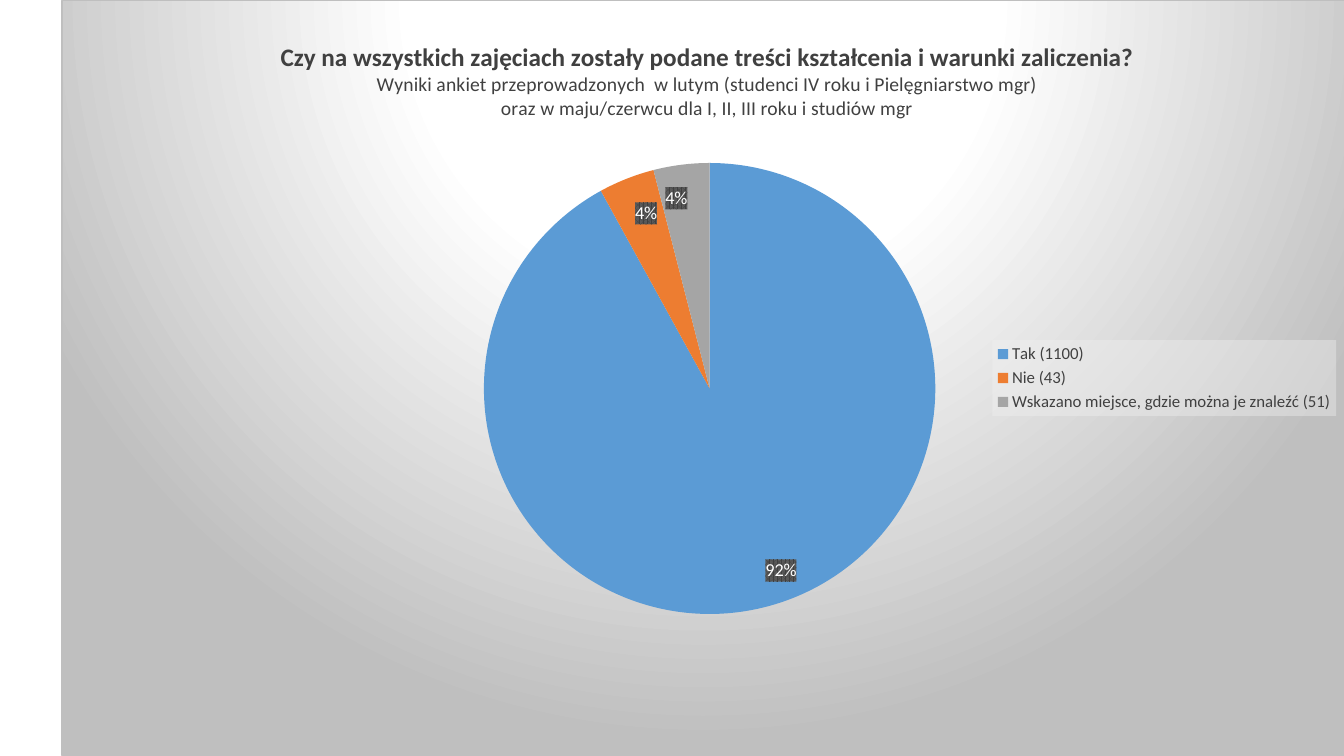
import copy

import pptx
import pptx.chart.data
import pptx.dml.color
import pptx.enum.chart
import pptx.oxml
import pptx.oxml.ns
import pptx.util

Inches = pptx.util.Inches
Pt = pptx.util.Pt
RGBColor = pptx.dml.color.RGBColor
qn = pptx.oxml.ns.qn

WHITE = RGBColor(0xFF, 0xFF, 0xFF)
SILVER = RGBColor(0xBF, 0xBF, 0xBF)
PALE = RGBColor(0xF2, 0xF2, 0xF2)
DARK = RGBColor(0x40, 0x40, 0x40)
CHARCOAL = RGBColor(0x59, 0x59, 0x59)
BLUE = RGBColor(0x5B, 0x9B, 0xD5)
ORANGE = RGBColor(0xED, 0x7D, 0x31)
GRAY = RGBColor(0xA5, 0xA5, 0xA5)
FONT = "Calibri"

ANSWERS = [
    ("Tak (1100)", 92, BLUE, (0.025, -0.026)),
    ("Nie (43)", 4, ORANGE, (0.005, 0.024)),
    ("Wskazano miejsce, gdzie można je znaleźć (51)", 4, GRAY, (-0.013, 0.022)),
]
QUESTION = "Czy na wszystkich zajęciach zostały podane treści kształcenia i warunki zaliczenia?"
SURVEY = [
    "Wyniki ankiet przeprowadzonych  w lutym (studenci IV roku i Pielęgniarstwo mgr)",
    "oraz w maju/czerwcu dla I, II, III roku i studiów mgr",
]


def set_font(font, size, color, bold=False):
    """Apply the slide's typeface with a size, colour and weight."""
    font.name = FONT
    font.size = Pt(size)
    font.bold = bold
    font.color.rgb = color


def add_text(p, text, size=14, color=DARK, bold=False):
    """Add a formatted run to a paragraph."""
    r = p.add_run()
    r.text = text
    set_font(r.font, size, color, bold)


def chart_xml(tag, content):
    """Return a chart element holding the given XML."""
    return pptx.oxml.parse_xml(
        f'<c:{tag} {pptx.oxml.ns.nsdecls("c", "a")}>{content}</c:{tag}>')


def manual_layout(modes="", **fractions):
    """Return a layout element placed by fractions of the chart."""
    sizes = "".join(f'<c:{tag} val="{val}"/>' for tag, val in fractions.items())
    return chart_xml("layout", f"<c:manualLayout>{modes}{sizes}</c:manualLayout>")


EDGES = '<c:xMode val="edge"/><c:yMode val="edge"/>'


def set_background(chart):
    """Give the chart area its radial gradient and thin border."""
    stops = "".join(
        f'<a:gs pos="{pos * 1000}"><a:srgbClr val="{color}"/></a:gs>'
        for pos, color in [(0, WHITE), (39, WHITE), (100, SILVER)])
    chart.element.find(qn("c:chart")).addnext(chart_xml(
        "spPr",
        f'<a:gradFill><a:gsLst>{stops}</a:gsLst><a:path path="circle">'
        '<a:fillToRect l="50000" t="-80000" r="50000" b="180000"/></a:path></a:gradFill>'
        f'<a:ln w="{Pt(0.75)}"><a:solidFill><a:srgbClr val="{SILVER}"/></a:solidFill></a:ln>'))


def set_title(chart, x, y):
    """Write the question and the survey dates above the pie."""
    title = chart.chart_title
    tf = title.text_frame
    add_text(tf.paragraphs[0], QUESTION, size=18, bold=True)
    for line in SURVEY:
        add_text(tf.add_paragraph(), line)
    title.include_in_layout = False
    for old in title._element.findall(qn("c:layout")):
        title._element.remove(old)
    title._element.find(qn("c:tx")).addnext(manual_layout(EDGES, x=x, y=y))


def set_legend(chart):
    """Place the legend at the right on a translucent panel."""
    chart.has_legend = True
    legend = chart.legend
    legend.position = pptx.enum.chart.XL_LEGEND_POSITION.RIGHT
    legend.include_in_layout = False
    set_font(legend.font, 12, DARK)
    legend._element.find(qn("c:txPr")).addprevious(chart_xml(
        "spPr",
        f'<a:solidFill><a:srgbClr val="{PALE}"><a:alpha val="39000"/></a:srgbClr></a:solidFill>'))


def set_labels(series):
    """Show percentages on dark patterned tags, each shifted inside its slice."""
    labels = series.data_labels
    labels.show_percentage = True
    labels.show_value = False
    labels.number_format = "0%"
    labels.number_format_is_linked = False
    labels.position = pptx.enum.chart.XL_LABEL_POSITION.INSIDE_END
    set_font(labels.font, 13, WHITE)
    group = labels._element
    group.find(qn("c:txPr")).addprevious(chart_xml(
        "spPr",
        f'<a:pattFill prst="pct75"><a:fgClr><a:srgbClr val="{DARK}"/></a:fgClr>'
        f'<a:bgClr><a:srgbClr val="{CHARCOAL}"/></a:bgClr></a:pattFill>'))
    shared = [el for el in group if el.tag != qn("c:showLeaderLines")]
    for i, (_, _, _, (dx, dy)) in enumerate(ANSWERS):
        label = chart_xml("dLbl", f'<c:idx val="{i}"/>')
        label.append(manual_layout(x=dx, y=dy))
        label.extend(copy.deepcopy(shared))
        group.insert(i, label)


def set_plot(chart, **box):
    """Position the pie by fractions of the chart and colour its slices."""
    plot = chart.plots[0]
    plot.vary_by_categories = True
    for i, (_, _, color, _) in enumerate(ANSWERS):
        fill = plot.series[0].points[i].format.fill
        fill.solid()
        fill.fore_color.rgb = color
    set_labels(plot.series[0])
    area = chart.element.find(".//" + qn("c:plotArea"))
    for old in area.findall(qn("c:layout")):
        area.remove(old)
    area.insert(0, manual_layout('<c:layoutTarget val="inner"/>' + EDGES, **box))


def add_survey_chart(slide, x, y, w, h):
    """Build the survey pie chart in the given box."""
    data = pptx.chart.data.CategoryChartData()
    data.categories = [answer[0] for answer in ANSWERS]
    data.add_series("Odpowiedzi", [answer[1] for answer in ANSWERS])
    chart = slide.shapes.add_chart(
        pptx.enum.chart.XL_CHART_TYPE.PIE,
        Inches(x), Inches(y), Inches(w), Inches(h), data).chart
    set_font(chart.font, 10, DARK)
    set_background(chart)
    set_title(chart, 0.168, 0.049)
    set_legend(chart)
    set_plot(chart, x=0.329, y=0.215, w=0.352, h=0.598)


def main():
    """Create the presentation."""
    prs = pptx.Presentation()
    prs.slide_width = Inches(13.33)
    prs.slide_height = Inches(7.5)
    slide = prs.slides.add_slide(prs.slide_layouts[6])
    add_survey_chart(slide, 0.61, 0, 12.73, 7.5)
    prs.save("out.pptx")


if __name__ == "__main__":
    main()
